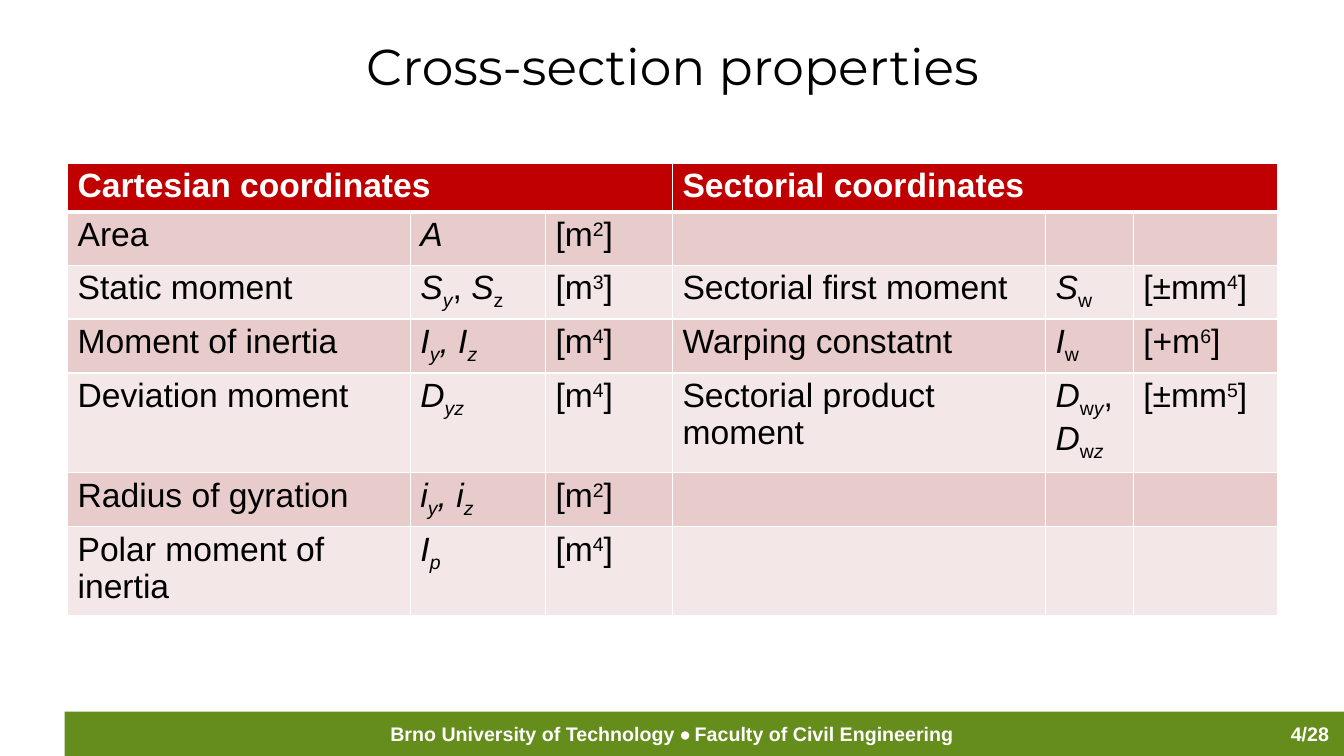
"""Build the cross-section properties slide with its table and footer."""
from lxml import etree
from pptx import Presentation
from pptx import util as u
from pptx.dml.color import RGBColor
from pptx.enum import shapes, text
from pptx.oxml.ns import qn

TITLE = "Cross-section properties"
FOOTER = [("Brno University of Technology ", "Arial"), ("• ", "Calibri"),
          ("Faculty of Civil Engineering", "Arial")]
PAGE = [("4/28", "Arial")]
HEADERS = {0: "Cartesian coordinates", 3: "Sectorial coordinates"}


def unit(base, power):
    return [("[" + base, ""), (power, "^"), ("]", "")]


# Style marks: i = italic, _ = subscript, ^ = superscript
ROWS = [
    ("Area", [("A", "i")], unit("m", "2")),
    ("Static moment",
     [("S", "i"), ("y", "i_"), (", ", ""), ("S", "i"), ("z", "_")], unit("m", "3"),
     "Sectorial first moment", [("S", "i"), ("w", "_")], unit("±mm", "4")),
    ("Moment of inertia",
     [("I", "i"), ("y", "i_"), (", I", "i"), ("z", "i_")], unit("m", "4"),
     "Warping constatnt", [("I", "i"), ("w", "_")], unit("+m", "6")),
    ("Deviation moment", [("D", "i"), ("yz", "i_")], unit("m", "4"),
     "Sectorial product moment",
     [("D", "i"), ("w", "_"), ("y", "i_"), (", ", ""),
      ("D", "i"), ("w", "_"), ("z", "i_")], unit("±mm", "5")),
    ("Radius of gyration",
     [("i", "i"), ("y", "i_"), (", i", "i"), ("z", "i_")], unit("m", "2")),
    ("Polar moment of inertia", [("I", "i"), ("p", "i_")], unit("m", "4")),
]
COL_WIDTHS = [3.4, 1.34, 1.26, 3.7, 0.87, 1.43]
ROW_HEIGHTS = [0.47, 0.53, 0.53, 0.53, 0.95, 0.53, 0.83]
BANDS = ["E8CCCC", "F4E7E7"]
BASELINES = {"_": "-25000", "^": "30000"}


def color(value):
    return RGBColor.from_string(value)


def set_font(font, size, name, value, bold=False):
    font.size, font.name, font.bold = u.Pt(size), name, bold
    font.color.rgb = color(value)


def add_text(s, box, runs, size, value, align, bold=False):
    tf = s.shapes.add_textbox(*map(u.Inches, box)).text_frame
    tf.word_wrap = True
    p = tf.paragraphs[0]
    p.alignment = align
    for content, name in runs:
        r = p.add_run()
        r.text = content
        set_font(r.font, size, name, value, bold)


def set_borders(cell, bottom):
    tc_pr = cell._tc.get_or_add_tcPr()
    for i, (side, width) in enumerate([("L", 1), ("R", 1), ("T", 1), ("B", bottom)]):
        ln = etree.Element(qn("a:ln" + side), w=str(u.Pt(width)))
        fill = etree.SubElement(ln, qn("a:solidFill"))
        etree.SubElement(fill, qn("a:srgbClr"), val="FFFFFF")
        tc_pr.insert(i, ln)


def fill_cell(cell, content, fill, value, bold=False, bottom=1):
    cell.fill.solid()
    cell.fill.fore_color.rgb = color(fill)
    cell.margin_top = cell.margin_bottom = u.Inches(0.04)
    set_borders(cell, bottom)
    p = cell.text_frame.paragraphs[0]
    set_font(p.font, 24, "Arial", value, bold)
    runs = [(content, "")] if isinstance(content, str) else content
    for part, style in runs:
        if not part:
            continue
        r = p.add_run()
        r.text = part
        set_font(r.font, 24, "Arial", value, bold)
        r.font.italic = "i" in style
        for mark, baseline in BASELINES.items():
            if mark in style:
                r.font._element.set("baseline", baseline)


def add_table(s):
    size = (sum(COL_WIDTHS), sum(ROW_HEIGHTS))
    table = s.shapes.add_table(len(ROW_HEIGHTS), len(COL_WIDTHS),
                               *map(u.Inches, (0.67, 1.62, *size))).table
    table.first_row = table.horz_banding = False
    for col, width in zip(table.columns, COL_WIDTHS):
        col.width = u.Inches(width)
    for row, height in zip(table.rows, ROW_HEIGHTS):
        row.height = u.Inches(height)
    for j in range(len(COL_WIDTHS)):
        fill_cell(table.cell(0, j), HEADERS.get(j, ""), "C00000", "FFFFFF", True, 3)
        for i, row in enumerate(ROWS):
            content = row[j] if j < len(row) else ""
            fill_cell(table.cell(i + 1, j), content, BANDS[i % 2], "000000")
    for j in HEADERS:
        table.cell(0, j).merge(table.cell(0, j + 2))


def main():
    prs = Presentation()
    prs.slide_width, prs.slide_height = u.Inches(13.33), u.Inches(7.5)
    s = prs.slides.add_slide(prs.slide_layouts[6])
    bar = s.shapes.add_shape(shapes.MSO_SHAPE.RECTANGLE,
                             *map(u.Inches, (0.64, 7.06, 12.69, 0.44)))
    bar.shadow.inherit = False
    bar.fill.solid()
    bar.fill.fore_color.rgb = color("658D1B")
    bar.line.fill.background()
    center, right = text.PP_ALIGN.CENTER, text.PP_ALIGN.RIGHT
    add_text(s, (0, 7.11, 13.33, 0.34), FOOTER, 14, "FFFFFF", center, True)
    add_text(s, (11.97, 7.11, 1.31, 0.34), PAGE, 14, "FFFFFF", right, True)
    add_text(s, (0.67, 0.3, 12, 1.09), [(TITLE, "Montserrat")], 36, "000000", center)
    add_table(s)
    prs.save("out.pptx")


if __name__ == "__main__":
    main()
